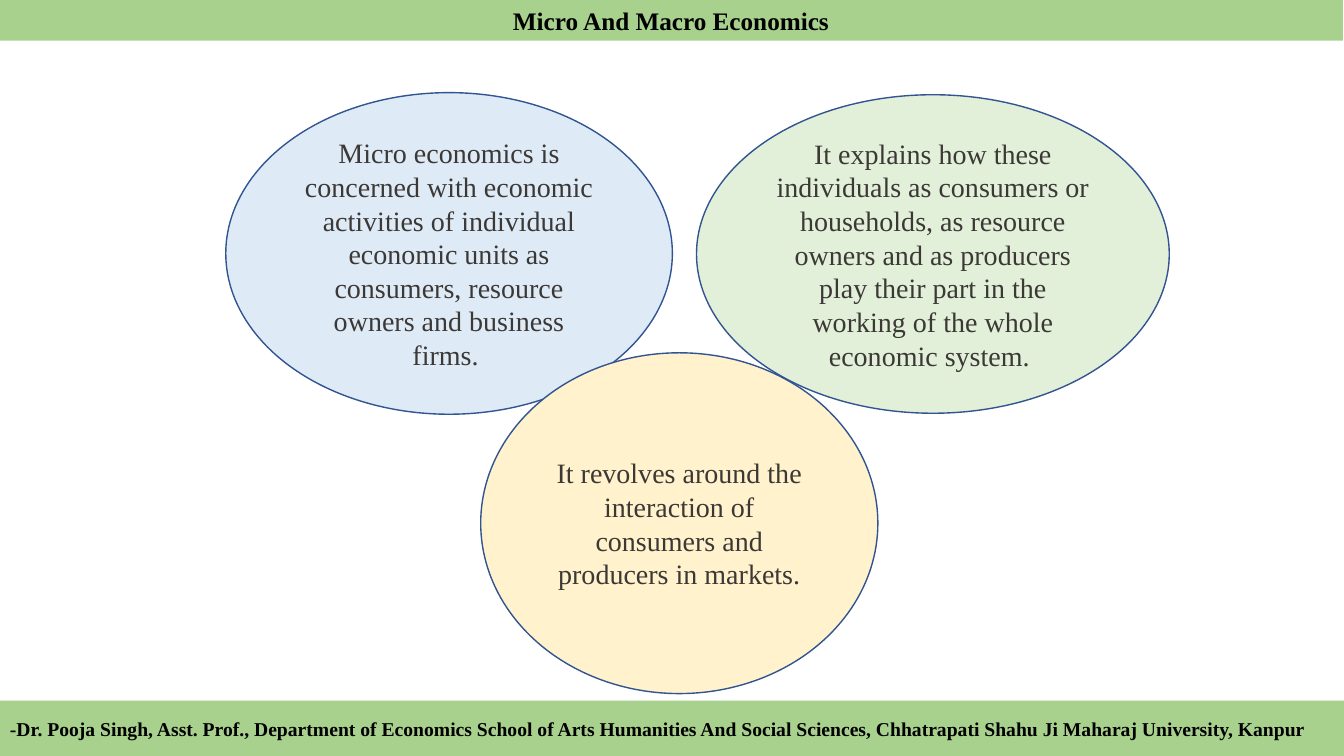
from dataclasses import dataclass

from pptx import Presentation
from pptx.dml.color import RGBColor
from pptx.enum.shapes import MSO_SHAPE
from pptx.enum.text import MSO_ANCHOR, MSO_AUTO_SIZE, PP_ALIGN
from pptx.shapes.autoshape import Shape
from pptx.slide import Slide
from pptx.util import Pt

WIDTH, HEIGHT = 960, 540
FONT = "Times New Roman"
COLORS = {
    "band": "A9D18E",
    "blue": "DEEBF7",
    "green": "E2F0D9",
    "yellow": "FFF2CC",
    "outline": "325491",
    "body": "3B3835",
    "black": "000000",
}


@dataclass
class Block:
    text: str
    left: float
    top: float
    width: float
    height: float
    fill: str


@dataclass
class Band(Block):
    size: int
    align: PP_ALIGN


def color(name: str) -> RGBColor:
    return RGBColor.from_string(COLORS[name])


def add_block(s: Slide, kind: MSO_SHAPE, block: Block, size: int,
              font_color: str, align: PP_ALIGN, bold: bool) -> Shape:
    sp = s.shapes.add_shape(kind, Pt(block.left), Pt(block.top),
                            Pt(block.width), Pt(block.height))
    sp.shadow.inherit = False
    sp.fill.solid()
    sp.fill.fore_color.rgb = color(block.fill)
    tf = sp.text_frame
    tf.word_wrap = True
    tf.vertical_anchor = MSO_ANCHOR.MIDDLE
    p = tf.paragraphs[0]
    p.text = block.text
    p.alignment = align
    font = p.runs[0].font
    font.name, font.size, font.bold = FONT, Pt(size), bold
    font.color.rgb = color(font_color)
    return sp


def add_ellipse(s: Slide, block: Block) -> None:
    sp = add_block(s, MSO_SHAPE.OVAL, block, 20, "body", PP_ALIGN.CENTER, False)
    sp.line.color.rgb = color("outline")
    sp.line.width = Pt(1)


def add_band(s: Slide, band: Band) -> Shape:
    sp = add_block(s, MSO_SHAPE.RECTANGLE, band, band.size, "black", band.align, True)
    sp.line.fill.background()
    return sp


ELLIPSES = [
    Block("Micro economics is concerned with economic activities of individual "
          "economic units as consumers, resource owners and business firms. ",
          161.3, 66.2, 319, 229.7, "blue"),
    Block("It explains how these individuals as consumers or households, as "
          "resource owners and as producers play their part in the working of "
          "the whole economic system. ",
          497.5, 67.7, 337.7, 227.5, "green"),
    Block("It revolves around the interaction of consumers and producers in markets.",
          343.4, 252, 283.7, 243.4, "yellow"),
]
FOOTER = Band("-Dr. Pooja Singh, Asst. Prof., Department of Economics School of Arts "
              "Humanities And Social Sciences, Chhatrapati Shahu Ji Maharaj "
              "University, Kanpur ",
              0, 500.4, WIDTH, 39.6, "band", 14, PP_ALIGN.LEFT)
TITLE = Band("Micro And Macro Economics", -0.7, 0, WIDTH, 29, "band", 18, PP_ALIGN.CENTER)


def main() -> None:
    prs = Presentation()
    prs.slide_width, prs.slide_height = Pt(WIDTH), Pt(HEIGHT)
    s = prs.slides.add_slide(prs.slide_layouts[6])

    # Overlapping statements
    for block in ELLIPSES:
        add_ellipse(s, block)

    # Footer and title bands
    add_band(s, FOOTER)
    tf = add_band(s, TITLE).text_frame
    tf.vertical_anchor = MSO_ANCHOR.TOP
    tf.auto_size = MSO_AUTO_SIZE.SHAPE_TO_FIT_TEXT

    prs.save("out.pptx")


if __name__ == "__main__":
    main()
